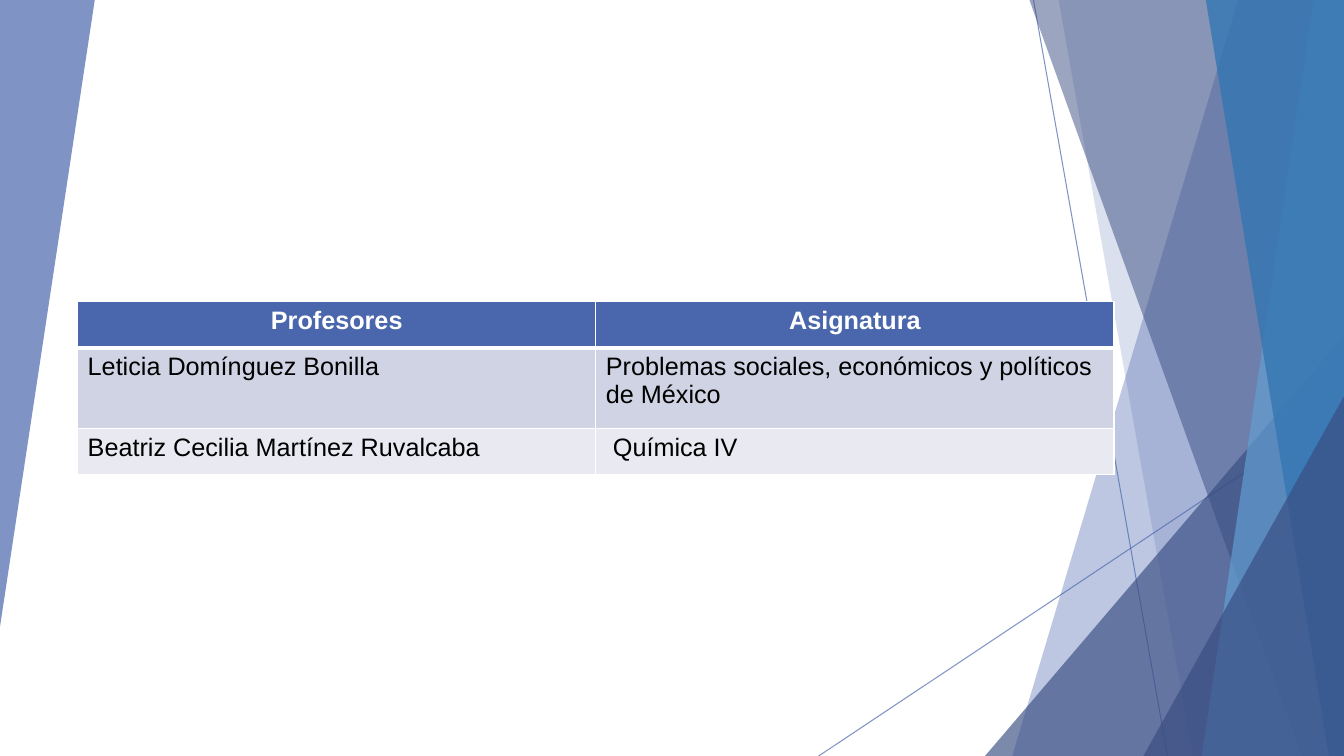
from lxml.etree import SubElement
from pptx import Presentation
from pptx.dml.color import RGBColor
from pptx.enum.shapes import MSO_CONNECTOR as Connector, MSO_SHAPE as Shape
from pptx.enum.text import PP_ALIGN as Align
from pptx.oxml import parse_xml
from pptx.oxml.ns import nsdecls, qn
from pptx.util import Inches, Pt

WHITE = RGBColor(0xFF, 0xFF, 0xFF)
BLACK = RGBColor(0x00, 0x00, 0x00)
BLUE = RGBColor(0x4A, 0x66, 0xAC)
NAVY = RGBColor(0x38, 0x4C, 0x81)
SKY = RGBColor(0x62, 0x9D, 0xD1)
OCEAN = RGBColor(0x34, 0x77, 0xB2)
ROW_FILLS = [BLUE, RGBColor(0xD0, 0xD3, 0xE3), RGBColor(0xE9, 0xEA, 0xF1)]

WIDTH, HEIGHT = 13.33, 7.5


def write_text(cell, text, color=BLACK, bold=False, align=Align.LEFT):
    paragraph = cell.text_frame.paragraphs[0]
    paragraph.alignment = align
    run = paragraph.add_run()
    run.text = text
    run.font.name = "Arial"
    run.font.size = Pt(18)
    run.font.bold = bold
    run.font.color.rgb = color


def set_opacity(shape, percent):
    color = next(shape._element.spPr.iter(qn("a:srgbClr")))
    SubElement(color, qn("a:alpha")).set("val", str(percent * 1000))


presentation = Presentation()
presentation.slide_width = Inches(WIDTH)
presentation.slide_height = Inches(HEIGHT)
slide = presentation.slides.add_slide(presentation.slide_layouts[6])
shapes = slide.shapes

for start, end in [((10.25, 0), (11.58, HEIGHT)), ((WIDTH, 4.03), (8.12, HEIGHT))]:
    line = shapes.add_connector(
        Connector.STRAIGHT, *[Inches(value) for value in start + end]
    )
    line.line.width = Pt(0.75)
    line.line.color.rgb = BLUE
    set_opacity(line, 70)
    SubElement(line._element.spPr, qn("a:effectLst"))

right_edge = [(WIDTH, 0), (WIDTH, HEIGHT)]
facets = [
    ("outline", [(0, 0), (0.94, 0), (0, 6.22)], BLUE, 70),
    ("outline", [(12.28, 0), *right_edge, (10.04, HEIGHT)], BLUE, 36),
    ("outline", [(10.5, 0), *right_edge, (11.83, HEIGHT)], BLUE, 20),
    ("triangle", (9.77, 3.33), NAVY, 66),
    ("outline", [(10.21, 0), *right_edge, (12.91, HEIGHT)], NAVY, 50),
    ("outline", [(13.03, 0), *right_edge, (11.92, HEIGHT)], SKY, 70),
    ("outline", [(11.96, 0), *right_edge, (13.18, HEIGHT)], OCEAN, 80),
    ("triangle", (11.34, 3.93), NAVY, 66),
]
for kind, geometry, color, opacity in facets:
    if kind == "triangle":
        left, top = geometry
        facet = shapes.add_shape(
            Shape.ISOSCELES_TRIANGLE,
            Inches(left), Inches(top), Inches(WIDTH - left), Inches(HEIGHT - top),
        )
        facet.adjustments[0] = 1
    else:
        points = [(Inches(x), Inches(y)) for x, y in geometry]
        builder = shapes.build_freeform(*points[0])
        builder.add_line_segments(points[1:], close=True)
        facet = builder.convert_to_shape()
    facet.shadow.inherit = False
    facet.line.fill.background()
    facet.fill.solid()
    facet.fill.fore_color.rgb = color
    set_opacity(facet, opacity)

rows = [
    ("Profesores", "Asignatura"),
    ("Leticia Domínguez Bonilla", "Problemas sociales, económicos y políticos de México"),
    ("Beatriz Cecilia Martínez Ruvalcaba", " Química IV"),
]
row_heights = [0.46, 0.8, 0.46]
table = shapes.add_table(
    len(rows), 2, Inches(0.77), Inches(2.99), Inches(10.28), Inches(sum(row_heights))
).table
for column in table.columns:
    column.width = Inches(5.14)

for row_index, texts in enumerate(rows):
    table.rows[row_index].height = Inches(row_heights[row_index])
    header = row_index == 0
    for column_index, text in enumerate(texts):
        cell = table.cell(row_index, column_index)
        if header:
            write_text(cell, text, color=WHITE, bold=True, align=Align.CENTER)
        else:
            write_text(cell, text)
        cell.fill.solid()
        cell.fill.fore_color.rgb = ROW_FILLS[row_index]
        properties = cell._tc.get_or_add_tcPr()
        for position, side in enumerate(["lnL", "lnR", "lnT", "lnB"]):
            thick = (header and side == "lnB") or (row_index == 1 and side == "lnT")
            border = parse_xml(
                f'<a:{side} {nsdecls("a")} w="{Pt(3 if thick else 1)}"><a:solidFill>'
                f'<a:srgbClr val="{WHITE}"/></a:solidFill></a:{side}>'
            )
            properties.insert(position, border)

presentation.save("out.pptx")
